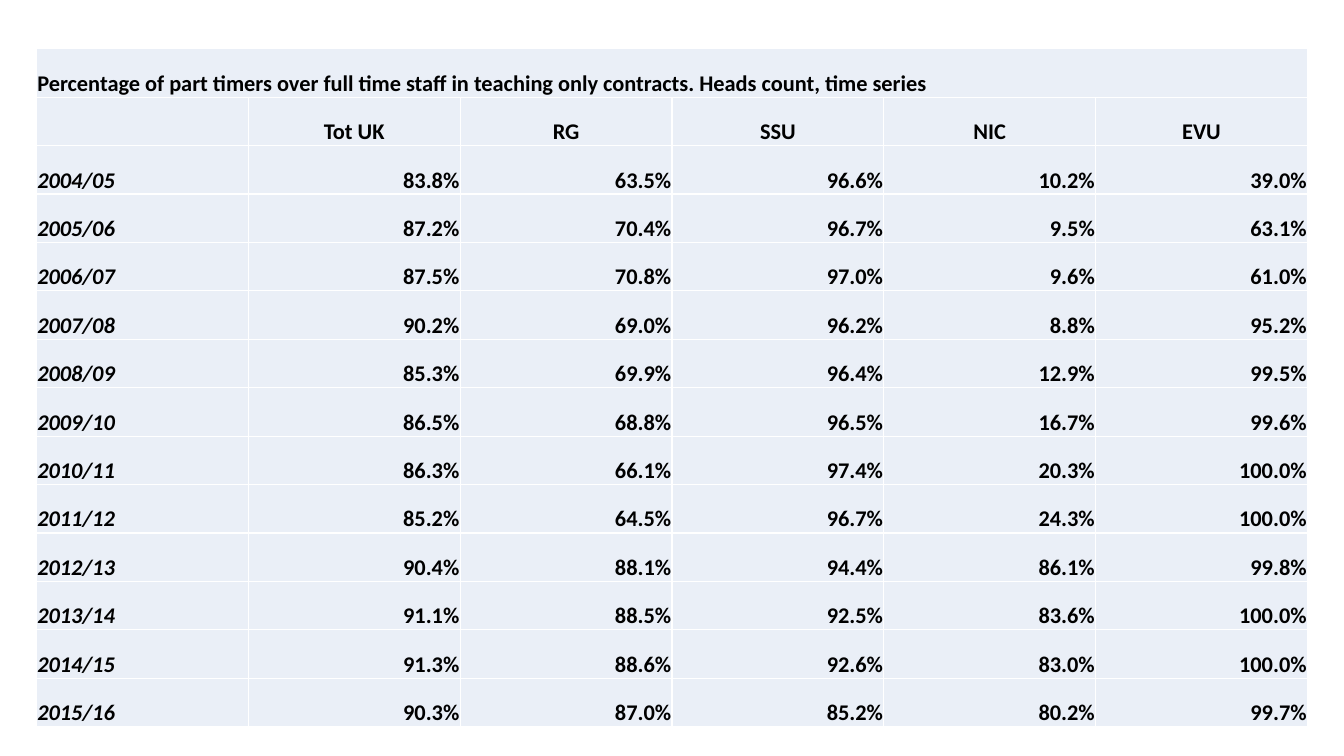
from lxml import etree
from pptx import Presentation
from pptx.dml.color import RGBColor
from pptx.enum.text import MSO_ANCHOR, PP_ALIGN
from pptx.oxml.ns import qn
from pptx.util import Cm, Pt

LEFT, CENTER, RIGHT = PP_ALIGN.LEFT, PP_ALIGN.CENTER, PP_ALIGN.RIGHT
BOTTOM = MSO_ANCHOR.BOTTOM

PALE_BLUE = RGBColor(0xEA, 0xEF, 0xF7)
BLACK = RGBColor(0x00, 0x00, 0x00)
WHITE = RGBColor(0xFF, 0xFF, 0xFF)

FONT = "Calibri"
TEXT_SIZE = Pt(16)
BORDER_WIDTH = Pt(1)
CELL_MARGIN = Cm(0.02)
TABLE_LEFT, TABLE_TOP = Cm(0.92), Cm(1.23)
TABLE_WIDTH, TABLE_HEIGHT = Cm(32.03), Cm(17.09)

CAPTION = ("Percentage of part timers over full time staff in teaching only "
           "contracts. Heads count, time series")
GROUPS = ["", "Tot UK", "RG", "SSU", "NIC", "EVU"]
PART_TIME_SHARES = [
    ("2004/05", 83.8, 63.5, 96.6, 10.2, 39.0),
    ("2005/06", 87.2, 70.4, 96.7, 9.5, 63.1),
    ("2006/07", 87.5, 70.8, 97.0, 9.6, 61.0),
    ("2007/08", 90.2, 69.0, 96.2, 8.8, 95.2),
    ("2008/09", 85.3, 69.9, 96.4, 12.9, 99.5),
    ("2009/10", 86.5, 68.8, 96.5, 16.7, 99.6),
    ("2010/11", 86.3, 66.1, 97.4, 20.3, 100.0),
    ("2011/12", 85.2, 64.5, 96.7, 24.3, 100.0),
    ("2012/13", 90.4, 88.1, 94.4, 86.1, 99.8),
    ("2013/14", 91.1, 88.5, 92.5, 83.6, 100.0),
    ("2014/15", 91.3, 88.6, 92.6, 83.0, 100.0),
    ("2015/16", 90.3, 87.0, 85.2, 80.2, 99.7),
]


def set_borders(cell):
    properties = cell._tc.get_or_add_tcPr()
    # The schema wants the four borders ahead of the cell fill.
    for position, side in enumerate(("a:lnL", "a:lnR", "a:lnT", "a:lnB")):
        border = etree.Element(qn(side), w=str(BORDER_WIDTH))
        line_fill = etree.SubElement(border, qn("a:solidFill"))
        etree.SubElement(line_fill, qn("a:srgbClr"), val=str(WHITE))
        properties.insert(position, border)


def style_cell(cell):
    cell.fill.solid()
    cell.fill.fore_color.rgb = PALE_BLUE
    cell.vertical_anchor = BOTTOM
    cell.margin_left = cell.margin_right = cell.margin_top = CELL_MARGIN
    cell.margin_bottom = 0
    set_borders(cell)


def write_cell(cell, text, alignment, italic=False):
    paragraph = cell.text_frame.paragraphs[0]
    paragraph.alignment = alignment
    run = paragraph.add_run()
    run.text = text
    run.font.name = FONT
    run.font.size = TEXT_SIZE
    run.font.bold = True
    run.font.italic = italic
    run.font.color.rgb = BLACK


def add_styled_table(slide, row_count, column_count):
    table = slide.shapes.add_table(row_count, column_count, TABLE_LEFT, TABLE_TOP,
                                   TABLE_WIDTH, TABLE_HEIGHT).table
    table.first_row = False
    table.horz_banding = False
    for cell in table.iter_cells():
        style_cell(cell)
    return table


def add_share_table(slide):
    table = add_styled_table(slide, len(PART_TIME_SHARES) + 2, len(GROUPS))

    table.cell(0, 0).merge(table.cell(0, len(GROUPS) - 1))
    write_cell(table.cell(0, 0), CAPTION, LEFT)

    for column, group in enumerate(GROUPS):
        if group:
            write_cell(table.cell(1, column), group, CENTER)

    for row, (year, *shares) in enumerate(PART_TIME_SHARES, start=2):
        write_cell(table.cell(row, 0), year, LEFT, italic=True)
        for column, share in enumerate(shares, start=1):
            write_cell(table.cell(row, column), f"{share:.1f}%", RIGHT)


def main():
    presentation = Presentation()
    presentation.slide_width = Cm(33.87)
    presentation.slide_height = Cm(19.05)
    blank_layout = presentation.slide_layouts.get_by_name("Blank")
    slide = presentation.slides.add_slide(blank_layout)
    add_share_table(slide)
    presentation.save("out.pptx")


if __name__ == "__main__":
    main()
